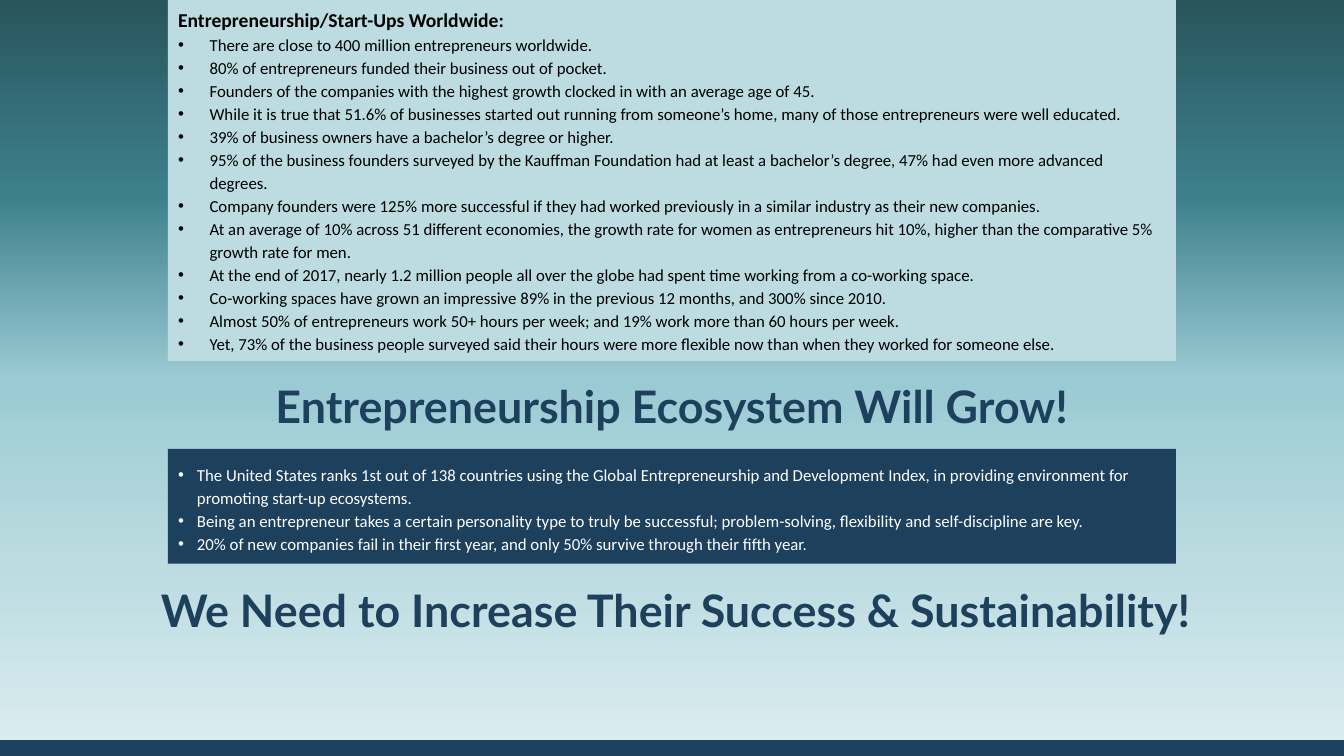
"""Build the slide on entrepreneurship worldwide and the start-up ecosystem."""
from dataclasses import dataclass

from lxml import etree
from pptx import Presentation
from pptx import util as u
from pptx.dml import color
from pptx.enum import shapes, text
from pptx.oxml import ns

NAVY, PALE, BLACK, WHITE, LINK = "1D405D", "BCDCE1", "000000", "FFFFFF", "1155CC"
GRADIENT = [(0, "29555D"), (26, "3D808C"), (50, "9ACAD3"), (75, PALE), (100, "DDEDF0")]


@dataclass
class Area:
    left: float
    top: float
    width: float
    height: float


@dataclass
class Span:
    words: str
    size: float = 12
    hue: str = BLACK
    bold: bool = False
    underline: bool = False
    font: str = "Calibri"


@dataclass
class Band:
    area: Area
    fill: str
    outlined: bool = False


BANDS = [
    Band(Area(0, 529.2, 960, 10.8), NAVY, True),
    Band(Area(120, 0, 720, 257.9), PALE),
    Band(Area(120, 320.6, 720, 82), NAVY),
]

WORLD_FACTS = [
    ["There are close to 400 million entrepreneurs worldwide."],
    ["80% of entrepreneurs funded their business out of pocket."],
    ["Founders of the companies with the highest growth clocked in with an average age of 45."],
    ["While it is true that 51.6% of businesses started out running from someone’s home, "
     "many of those entrepreneurs were well educated."],
    ["39% of business owners have a bachelor’s degree or higher."],
    ["95% of the business founders surveyed by the Kauffman Foundation had at least "
     "a bachelor’s degree, 47% had even more advanced degrees."],
    ["Company founders were 125% more successful if they had worked previously "
     "in a similar industry as their new companies."],
    ["At an average of 10% across 51 different economies, the growth rate for women "
     "as entrepreneurs hit 10%, higher than the comparative 5%", " ", "growth rate for men."],
    ["At the end of 2017, nearly 1.2 million people all over the globe had spent time "
     "working from a co-working space."],
    ["Co-working spaces have grown an impressive 89% in the previous 12 months, "
     "and 300% since 2010."],
    ["Almost 50% of entrepreneurs work 50+ hours per week; and 19% work more than "
     "60 hours per week."],
    ["Yet, 73% of the business people surveyed said their hours were more flexible now "
     "than when they worked for someone else."],
]
ECOSYSTEM_FACTS = [
    "The United States ranks 1st out of 138 countries using the Global Entrepreneurship "
    "and Development Index, in providing environment for promoting start-up ecosystems.",
    "Being an entrepreneur takes a certain personality type to truly be successful; "
    "problem-solving, flexibility and self-discipline are key.",
    "20% of new companies fail in their first year, and only 50% survive through "
    "their fifth year.",
]


def rgb(code: str) -> color.RGBColor:
    """Turn a hex string into a colour."""
    return color.RGBColor.from_string(code)


def paint_background(page) -> None:
    """Fill the page with the vertical gradient."""
    fill = page.background.fill
    fill.gradient()
    fill.gradient_angle = 270
    stops = page.element.find(".//" + ns.qn("a:gsLst"))
    for stop in list(stops):
        stops.remove(stop)
    for percent, code in GRADIENT:
        stop = etree.SubElement(stops, ns.qn("a:gs"), pos=str(percent * 1000))
        etree.SubElement(stop, ns.qn("a:srgbClr"), val=code)


def add_band(page, band: Band) -> None:
    """Draw one coloured rectangle."""
    area = band.area
    box = page.shapes.add_shape(shapes.MSO_SHAPE.RECTANGLE, u.Pt(area.left), u.Pt(area.top),
                                u.Pt(area.width), u.Pt(area.height))
    box.shadow.inherit = False
    box.fill.solid()
    box.fill.fore_color.rgb = rgb(band.fill)
    if band.outlined:
        box.line.color.rgb = rgb(band.fill)
        box.line.width = u.Pt(0.75)
    else:
        box.line.fill.background()


def place(box, area: Area, anchor, inset: float = 7.2) -> None:
    """Move a text holder to the front and set its frame."""
    box.left, box.top = u.Pt(area.left), u.Pt(area.top)
    box.width, box.height = u.Pt(area.width), u.Pt(area.height)
    box.element.getparent().append(box.element)
    frame = box.text_frame
    frame.word_wrap = True
    frame.auto_size = text.MSO_AUTO_SIZE.NONE
    frame.vertical_anchor = anchor
    frame.margin_left = frame.margin_right = u.Pt(7.2)
    frame.margin_top = frame.margin_bottom = u.Pt(inset)


def add_spans(para, spans: list[Span]) -> None:
    """Add formatted runs to a paragraph."""
    for span in spans:
        run = para.add_run()
        run.text = span.words
        run.font.name = span.font
        run.font.size = u.Pt(span.size)
        run.font.bold = span.bold
        run.font.underline = span.underline
        run.font.color.rgb = rgb(span.hue)


def set_bullet(para, indent: float, hue: str) -> None:
    """Give a paragraph a hanging bullet, or none when the indent is zero."""
    props = para._p.get_or_add_pPr()
    props.set("marL", str(u.Pt(indent)))
    props.set("indent", str(-u.Pt(indent)))
    if indent:
        tint = etree.SubElement(props, ns.qn("a:buClr"))
        etree.SubElement(tint, ns.qn("a:srgbClr"), val=hue)
        etree.SubElement(props, ns.qn("a:buFont"), typeface="Arial")
        etree.SubElement(props, ns.qn("a:buChar"), char="•")
    else:
        etree.SubElement(props, ns.qn("a:buNone"))


def write_list(box, rows: list[tuple[float, list[Span]]]) -> None:
    """Write rows of indent and spans as list paragraphs."""
    frame = box.text_frame
    for index, (indent, spans) in enumerate(rows):
        para = frame.add_paragraph() if index else frame.paragraphs[0]
        para.alignment = text.PP_ALIGN.LEFT
        para.line_spacing = 1.14
        para.space_before = para.space_after = u.Pt(0)
        set_bullet(para, indent, spans[0].hue)
        add_spans(para, spans)


def write_headline(box, area: Area, words: str) -> None:
    """Write one large centred line."""
    place(box, area, text.MSO_ANCHOR.MIDDLE)
    para = box.text_frame.paragraphs[0]
    para.alignment = text.PP_ALIGN.CENTER
    add_spans(para, [Span(words, 32, NAVY, True, font="Lato")])


def main() -> None:
    """Create the deck and save it."""
    deck = Presentation()
    deck.slide_width, deck.slide_height = u.Pt(960), u.Pt(540)
    page = deck.slides.add_slide(deck.slide_layouts[3])
    title, world, ecosystem = page.placeholders
    paint_background(page)
    for band in BANDS:
        add_band(page, band)

    write_headline(title, Area(120, 257.9, 720, 63), "Entrepreneurship Ecosystem Will Grow!")
    place(ecosystem, Area(120, 321, 720, 82), text.MSO_ANCHOR.BOTTOM)
    write_list(ecosystem, [(13.5, [Span(fact, hue=WHITE)]) for fact in ECOSYSTEM_FACTS])

    place(world, Area(120, 0, 720, 257.9), text.MSO_ANCHOR.TOP, 3.6)
    world.text_frame.auto_size = text.MSO_AUTO_SIZE.SHAPE_TO_FIT_TEXT
    heading = Span("Entrepreneurship/Start-Ups Worldwide:", 14, bold=True)
    facts = [(22.5, [Span(part, hue=LINK, underline=True) if part == " " else Span(part)
                     for part in fact]) for fact in WORLD_FACTS]
    write_list(world, [(0, [heading])] + facts)

    slogan = page.shapes.add_textbox(0, 0, 0, 0)
    write_headline(slogan, Area(5.8, 404, 954, 63),
                   "We Need to Increase Their Success & Sustainability!")
    deck.save("out.pptx")


if __name__ == "__main__":
    main()
